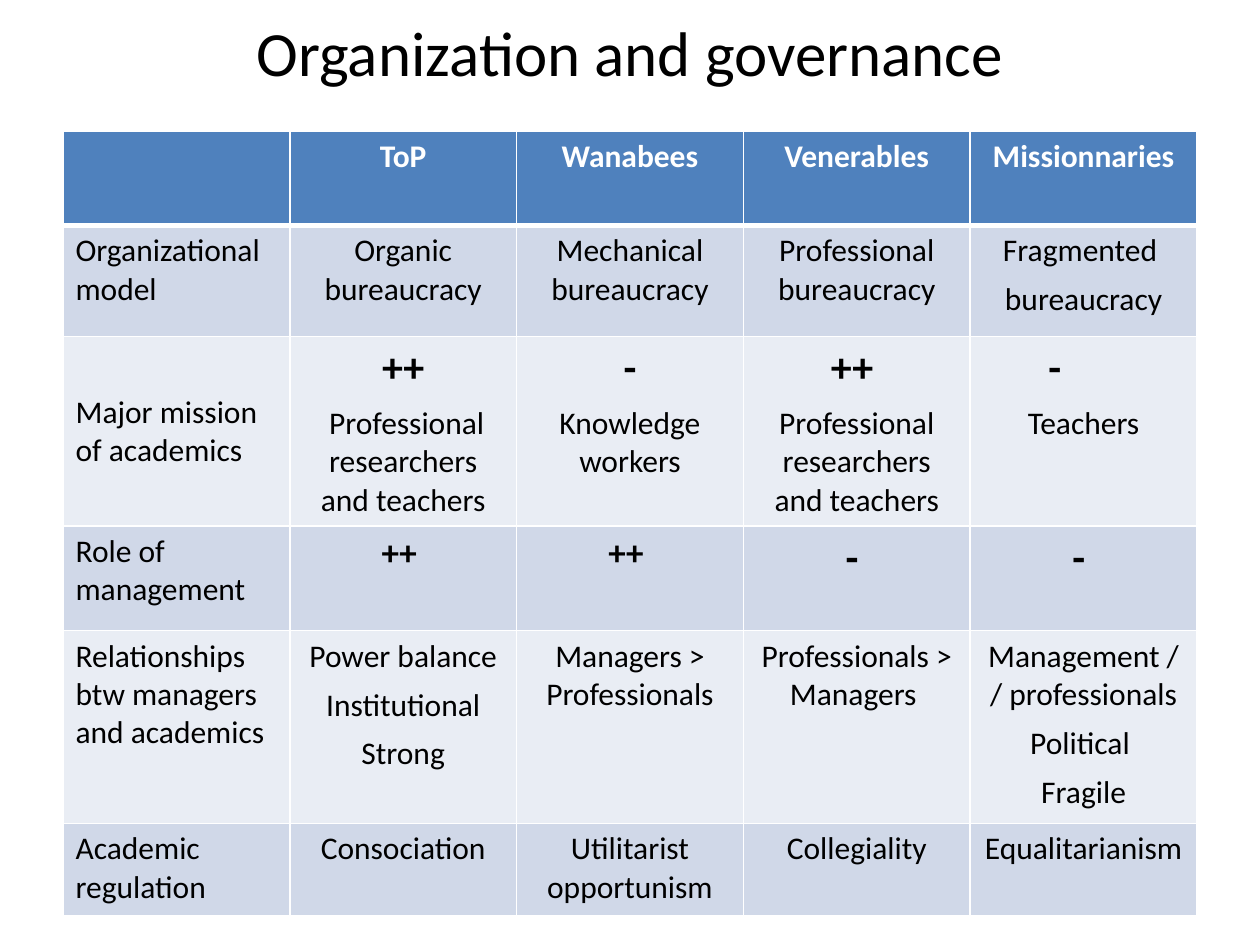
from dataclasses import dataclass

from lxml.etree import SubElement
from pptx import Presentation
from pptx.dml.color import RGBColor
from pptx.enum.text import MSO_ANCHOR, PP_ALIGN
from pptx.oxml.ns import qn
from pptx.util import Inches, Pt

HEADERS = ["", "ToP", "Wanabees", "Venerables", "Missionnaries"]
ROW_HEIGHTS = [0.75, 0.88, 1.5, 0.83, 1.53, 0.73]
COLUMN_WIDTH = 1.8


@dataclass
class Mark:
    """A bold rating sign; an indent places it from the left instead of centring it."""
    text: str
    size: int = 24
    indent: float = 0


# Each cell is a list of paragraphs: plain text or a Mark.
ROWS = [
    [["Organizational model"], ["Organic bureaucracy"], ["Mechanical bureaucracy"],
     ["Professional bureaucracy"], ["Fragmented ", "bureaucracy"]],
    [["Major mission of academics"],
     [Mark("++"), " Professional researchers and teachers"],
     [Mark("-"), "Knowledge workers"],
     [Mark("++ "), "Professional researchers and teachers"],
     [Mark("-", indent=0.52), "Teachers"]],
    [["Role of management"], [Mark("++ ", 20)], [Mark("++ ", 20)], [Mark("- ")], [Mark("- ")]],
    [["Relationships btw managers and academics"],
     ["Power balance", "Institutional", "Strong"],
     ["Managers > Professionals"],
     ["Professionals > Managers "],
     ["Management // professionals", "Political ", "Fragile"]],
    [["Academic regulation"], ["Consociation"], ["Utilitarist opportunism"],
     ["Collegiality"], ["Equalitarianism"]],
]


def color(value):
    return RGBColor.from_string(value)


class SlideBuilder:
    font = "Calibri"
    black = "000000"
    white = "FFFFFF"
    header_fill = "4F81BD"
    band_fills = ["D0D8E8", "E9EDF4"]
    body_size = 18

    def __init__(self, deck):
        self.page = deck.slides.add_slide(deck.slide_layouts[5])

    def add_span(self, para, text, size, ink, bold=False):
        span = para.add_run()
        span.text = text
        span.font.name = self.font
        span.font.size = Pt(size)
        span.font.bold = bold
        span.font.color.rgb = color(ink)

    def add_title(self, text):
        title = self.page.shapes.title
        title.left, title.top = Inches(0.5), Inches(0)
        title.width, title.height = Inches(9), Inches(0.82)
        frame = title.text_frame
        frame.vertical_anchor = MSO_ANCHOR.MIDDLE
        para = frame.paragraphs[0]
        para.alignment = PP_ALIGN.CENTER
        self.add_span(para, text, 36, self.black)

    def add_borders(self, cell, top, bottom):
        properties = cell._tc.get_or_add_tcPr()
        for tag, width in (("lnL", 1), ("lnR", 1), ("lnT", top), ("lnB", bottom)):
            line = SubElement(properties, qn(f"a:{tag}"), w=str(Pt(width)))
            fill = SubElement(line, qn("a:solidFill"))
            SubElement(fill, qn("a:srgbClr"), val=self.white)

    def style_cell(self, cell, row):
        self.add_borders(cell, 3 if row == 1 else 1, 3 if row == 0 else 1)
        cell.fill.solid()
        fill = self.header_fill if row == 0 else self.band_fills[(row - 1) % 2]
        cell.fill.fore_color.rgb = color(fill)

    def fill_cell(self, cell, items, alignment):
        frame = cell.text_frame
        for index, item in enumerate(items):
            para = frame.add_paragraph() if index else frame.paragraphs[0]
            para.alignment = alignment
            para.space_after = Pt(6)
            if isinstance(item, Mark):
                self.add_span(para, item.text, item.size, self.black, bold=True)
                if item.indent:
                    para.alignment = PP_ALIGN.LEFT
                    para._p.get_or_add_pPr().set("marL", str(Inches(item.indent)))
            else:
                self.add_span(para, item, self.body_size, self.black)

    def add_table(self, headers, rows):
        columns = len(headers)
        table = self.page.shapes.add_table(
            len(rows) + 1, columns, Inches(0.5), Inches(1.04),
            Inches(COLUMN_WIDTH * columns), Inches(sum(ROW_HEIGHTS))).table
        for column in table.columns:
            column.width = Inches(COLUMN_WIDTH)
        for row, height in zip(table.rows, ROW_HEIGHTS):
            row.height = Inches(height)

        for column, header in enumerate(headers):
            cell = table.cell(0, column)
            self.style_cell(cell, 0)
            if header:
                para = cell.text_frame.paragraphs[0]
                para.alignment = PP_ALIGN.CENTER
                self.add_span(para, header, self.body_size, self.white, bold=True)

        for row, cells in enumerate(rows, 1):
            for column, items in enumerate(cells):
                cell = table.cell(row, column)
                self.style_cell(cell, row)
                self.fill_cell(cell, items, PP_ALIGN.CENTER if column else PP_ALIGN.LEFT)
        return table


def main():
    deck = Presentation()
    deck.slide_width, deck.slide_height = Inches(10), Inches(7.5)
    builder = SlideBuilder(deck)
    builder.add_title("Organization and governance")
    table = builder.add_table(HEADERS, ROWS)
    # The mission label starts one line lower, beside the text under the marks.
    table.cell(2, 0).margin_top = Inches(0.45)
    deck.save("out.pptx")


if __name__ == "__main__":
    main()
